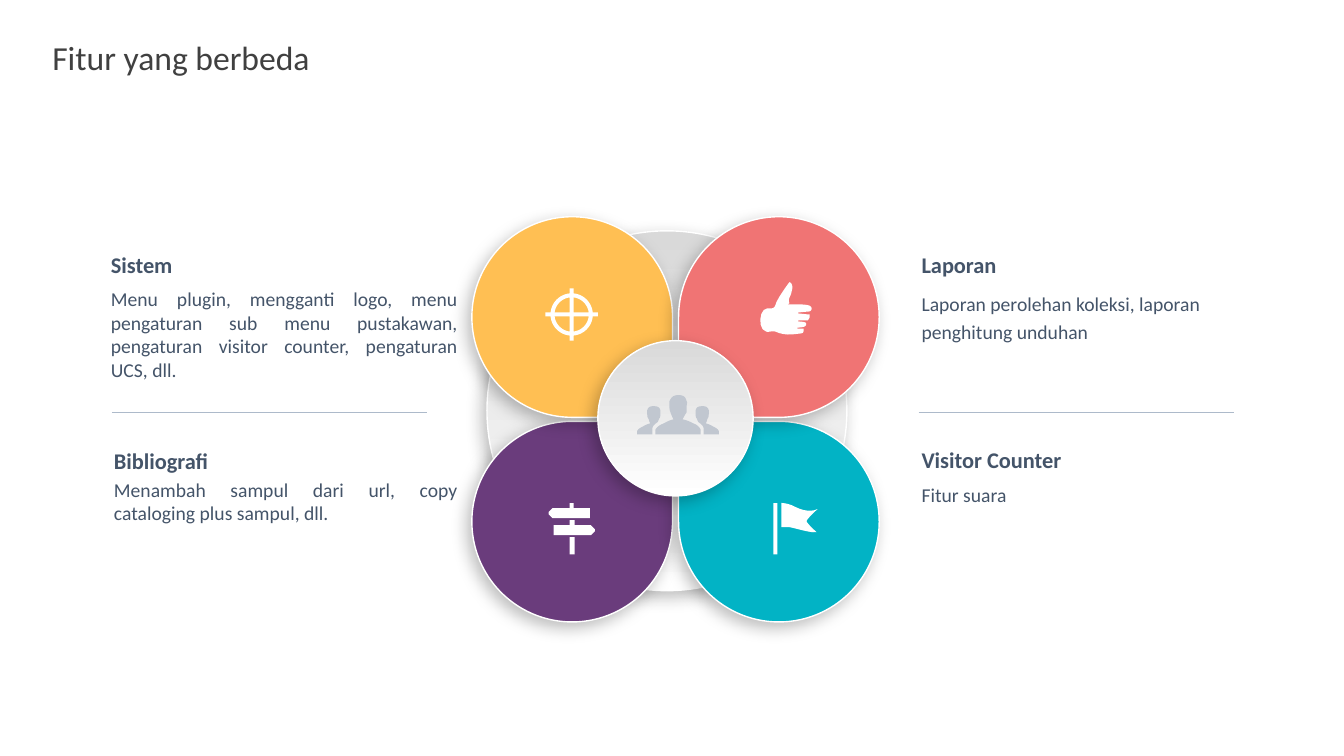
from dataclasses import dataclass
from math import asin, cos, pi, sin
from typing import Optional

from lxml.etree import SubElement
from pptx import Presentation
from pptx.dml.color import RGBColor
from pptx.enum.shapes import MSO_CONNECTOR, MSO_SHAPE
from pptx.enum.text import MSO_AUTO_SIZE, PP_ALIGN
from pptx.oxml.ns import qn
from pptx.util import Inches, Pt


@dataclass(frozen=True)
class Theme:
    font: str = "Calibri"
    title: str = "404040"
    text: str = "445469"
    rule: str = "ADBACA"
    white: str = "FFFFFF"
    grey: str = "D9D9D9"
    people: str = "C1C7D0"
    title_size: int = 24
    heading_size: int = 16
    body_size: int = 14


@dataclass(frozen=True)
class Feature:
    heading: str
    body: str
    x: float
    heading_y: float
    body_y: float
    width: float
    height: float
    align: Optional[PP_ALIGN] = None
    spacing: Optional[float] = None


@dataclass(frozen=True)
class Petal:
    x: float
    y: float
    rotation: int
    color: str


THEME = Theme()
LEFT, RIGHT, TOP, BOTTOM = 4.68, 6.73, 2.15, 4.18

FEATURES = [
    Feature("Sistem", "Menu plugin, mengganti logo, menu pengaturan sub menu pustakawan, "
            "pengaturan visitor counter, pengaturan UCS, dll.",
            1.1, 2.49, 2.85, 3.44, 0.94, PP_ALIGN.JUSTIFY),
    Feature("Bibliografi", "Menambah sampul dari url, copy cataloging plus sampul, dll.",
            1.13, 4.44, 4.74, 3.41, 0.47, PP_ALIGN.JUSTIFY),
    Feature("Laporan", "Laporan perolehan koleksi, laporan penghitung unduhan",
            9.14, 2.49, 2.85, 3.49, 0.56, spacing=1.2),
    Feature("Visitor Counter", "Fitur suara", 9.14, 4.43, 4.74, 3.38, 0.28, spacing=1.2),
]

PETALS = [
    Petal(LEFT, BOTTOM, 0, "6A3C7C"),
    Petal(RIGHT, BOTTOM, 270, "02B3C5"),
    Petal(LEFT, TOP, 90, "FFBF53"),
    Petal(RIGHT, TOP, 180, "F07474"),
]

THUMB = [
    (7.91, 3.19), (7.92, 3.18), (8.01, 3.18), (8.04, 3.15, 8.03, 3.13, 8.03, 3.12),
    (8.02, 3.12), (7.92, 3.11), (7.91, 3.11), (7.92, 3.1), (8.03, 3.09),
    (8.05, 3.08, 8.06, 3.06, 8.04, 3.04), (8.02, 3.02, 7.95, 3.02, 7.89, 3.02),
    (7.81, 3.02), (7.83, 3.01), (7.81, 2.96, 7.85, 2.93, 7.85, 2.9),
    (7.88, 2.81, 7.83, 2.8, 7.83, 2.8), (7.83, 2.8, 7.7, 2.97, 7.69, 3.03),
    (7.68, 3.07, 7.63, 3.06, 7.61, 3.06), (7.53, 3.06, 7.51, 3.27, 7.6, 3.29),
    (7.62, 3.3, 7.65, 3.28, 7.69, 3.29), (7.78, 3.33, 7.85, 3.32, 7.93, 3.31),
    (7.98, 3.31, 7.97, 3.28, 7.97, 3.26), (7.91, 3.26), (7.91, 3.25),
    (7.92, 3.25, 7.95, 3.25, 7.98, 3.24), (8, 3.23, 8, 3.21, 7.99, 3.2),
    (7.96, 3.19, 7.93, 3.19, 7.92, 3.19),
]
UPPER_BOARD = [(5.65, 5.04), (5.48, 5.04), (5.44, 5.08), (5.44, 5.1), (5.48, 5.14),
               (5.85, 5.14), (5.85, 5.04), (5.69, 5.04), (5.69, 4.99), (5.65, 4.99)]
LOWER_BOARD = [(5.65, 5.21), (5.49, 5.21), (5.49, 5.31), (5.86, 5.31), (5.9, 5.27),
               (5.9, 5.25), (5.86, 5.21), (5.7, 5.21), (5.7, 5.16), (5.65, 5.16)]
FLAG = [(8, 5.17), (8, 5.15, 8.11, 5.05, 8.11, 5.05), (8.05, 5.08, 7.97, 5.07, 7.89, 5.03),
        (7.82, 4.99, 7.75, 4.99, 7.75, 4.99), (7.75, 5.23), (7.76, 5.23, 7.77, 5.23, 7.83, 5.23),
        (7.89, 5.24, 8.04, 5.29, 8.1, 5.28), (8.1, 5.28, 8, 5.19, 8, 5.17)]
SIDE_PERSON = [
    (6.47, 4.31), (6.47, 4.26), (6.47, 4.25, 6.47, 4.22, 6.52, 4.19),
    (6.53, 4.18, 6.53, 4.17, 6.54, 4.15), (6.55, 4.14, 6.55, 4.12, 6.55, 4.11),
    (6.55, 4.1, 6.55, 4.08, 6.55, 4.07), (6.54, 4.03, 6.51, 4.03, 6.48, 4.03),
    (6.46, 4.03, 6.43, 4.03, 6.42, 4.07), (6.42, 4.08, 6.42, 4.1, 6.42, 4.11),
    (6.42, 4.12, 6.42, 4.14, 6.43, 4.15), (6.44, 4.17, 6.44, 4.19, 6.45, 4.2),
    (6.41, 4.21, 6.38, 4.23, 6.36, 4.24), (6.32, 4.26, 6.32, 4.28, 6.32, 4.28), (6.32, 4.31),
]
MIDDLE_PERSON = [
    (6.9, 4.21), (6.87, 4.2, 6.83, 4.17, 6.77, 4.16), (6.78, 4.14, 6.79, 4.12, 6.81, 4.09),
    (6.81, 4.07, 6.81, 4.05, 6.81, 4.03), (6.81, 4.02, 6.82, 3.99, 6.81, 3.98),
    (6.8, 3.93, 6.77, 3.92, 6.73, 3.92), (6.69, 3.92, 6.66, 3.93, 6.64, 3.98),
    (6.64, 3.99, 6.64, 4.02, 6.64, 4.03), (6.64, 4.05, 6.64, 4.07, 6.65, 4.09),
    (6.66, 4.12, 6.67, 4.14, 6.68, 4.16), (6.63, 4.17, 6.59, 4.2, 6.56, 4.21),
    (6.5, 4.24, 6.5, 4.27, 6.5, 4.27), (6.5, 4.31), (6.95, 4.31), (6.95, 4.27),
    (6.95, 4.27, 6.95, 4.24, 6.9, 4.21),
]


def rgb(color: str) -> RGBColor:
    return RGBColor.from_string(color)


def add_text(s, box: tuple, text: str, size: int, color: str, bold: bool = False,
             inset: Optional[float] = 0, **layout) -> None:
    tf = s.shapes.add_textbox(*map(Inches, box)).text_frame
    tf.word_wrap = True
    tf.auto_size = MSO_AUTO_SIZE.SHAPE_TO_FIT_TEXT
    if inset is not None:
        for side in ("left", "top", "right", "bottom"):
            setattr(tf, f"margin_{side}", Inches(inset))
    p = tf.paragraphs[0]
    for key, value in layout.items():
        setattr(p, key, value)
    r = p.add_run()
    r.text = text
    for key, value in {"name": THEME.font, "size": Pt(size), "bold": bold}.items():
        setattr(r.font, key, value)
    r.font.color.rgb = rgb(color)


def add_disc(s, kind: MSO_SHAPE, x: float, y: float, size: float,
             color: Optional[str] = None, rotation: int = 0) -> None:
    sp = s.shapes.add_shape(kind, *map(Inches, (x, y, size, size)))
    sp.rotation = rotation
    if color:
        sp.fill.solid()
        sp.fill.fore_color.rgb = rgb(color)
    else:
        sp.fill.gradient()
        sp.fill.gradient_angle = 90
        for stop, shade in zip(sp.fill.gradient_stops, (THEME.white, THEME.grey)):
            stop.color.rgb = rgb(shade)
    sp.line.color.rgb = rgb(THEME.white)
    sp.line.width = Pt(1)
    sp.shadow.inherit = False
    effects = sp._element.spPr.find(qn("a:effectLst"))
    shadow = SubElement(effects, qn("a:outerShdw"), blurRad=str(Pt(12)), dist=str(Pt(5)),
                        dir="8100000", algn="tr", rotWithShape="0")
    black = SubElement(shadow, qn("a:srgbClr"), val="000000")
    SubElement(black, qn("a:alpha"), val="26000")


def paint(sp, color: str) -> None:
    sp.fill.solid()
    sp.fill.fore_color.rgb = rgb(color)
    sp.line.fill.background()
    sp.shadow.inherit = False


def flatten(outline: list, steps: int = 6) -> list:
    points = []
    for item in outline:
        if len(item) == 2:
            points.append(item)
            continue
        curve = (points[-1], item[:2], item[2:4], item[4:])
        for t in (i / steps for i in range(1, steps + 1)):
            weights = ((1 - t) ** 3, 3 * t * (1 - t) ** 2, 3 * t * t * (1 - t), t ** 3)
            points.append(tuple(sum(w * c[axis] for w, c in zip(weights, curve))
                                for axis in (0, 1)))
    return points


def add_outline(s, contours: list, color: str) -> None:
    loops = [[(Inches(x), Inches(y)) for x, y in flatten(c)] for c in contours]
    builder = s.shapes.build_freeform(*loops[0][0], scale=1.0)
    builder.add_line_segments(loops[0][1:], close=True)
    for loop in loops[1:]:
        builder.move_to(*loop[0])
        builder.add_line_segments(loop[1:], close=True)
    paint(builder.convert_to_shape(), color)


def add_bar(s, x: float, y: float, width: float, height: float, color: str) -> None:
    paint(s.shapes.add_shape(MSO_SHAPE.RECTANGLE, *map(Inches, (x, y, width, height))), color)


def target(cx: float, cy: float, reach: float, outer: float, inner: float, half: float) -> list:
    def arc(radius: float, quarter: int, steps: int = 12) -> list:
        gap = asin(half / radius)
        angles = [quarter * pi / 2 + gap + (pi / 2 - 2 * gap) * i / steps
                  for i in range(steps + 1)]
        return [(cx + radius * cos(a), cy + radius * sin(a)) for a in angles]

    edge, holes = [], []
    for quarter in range(4):
        c, n = cos(quarter * pi / 2), sin(quarter * pi / 2)
        tip_start, tip_end, corner = [(cx + u * c - v * n, cy + u * n + v * c)
                                      for u, v in ((reach, -half), (reach, half), (half, half))]
        edge += [tip_start, tip_end] + arc(outer, quarter)
        holes.append([corner] + arc(inner, quarter))
    return [edge] + holes


def add_rule(s, x: float, y: float, width: float) -> None:
    line = s.shapes.add_connector(MSO_CONNECTOR.STRAIGHT, *map(Inches, (x, y, x + width, y)))
    line.line.color.rgb = rgb(THEME.rule)
    line.line.width = Pt(0.5)
    SubElement(line._element.spPr, qn("a:effectLst"))


def main() -> None:
    prs = Presentation()
    prs.slide_width, prs.slide_height = Inches(13.33), Inches(7.5)
    s = prs.slides.add_slide(prs.slide_layouts[6])
    add_text(s, (0.42, 0.32, 4.65, 0.5), "Fitur yang berbeda", THEME.title_size, THEME.title,
             inset=None)
    add_disc(s, MSO_SHAPE.OVAL, 4.83, 2.29, 3.57)
    for petal in PETALS:
        add_disc(s, MSO_SHAPE.TEAR, petal.x, petal.y, 1.99, petal.color, petal.rotation)
    add_disc(s, MSO_SHAPE.OVAL, 5.93, 3.38, 1.54)

    add_outline(s, target(5.67, 3.12, 0.26, 0.21, 0.17, 0.02), THEME.white)
    for outline in (THUMB, UPPER_BOARD, LOWER_BOARD, FLAG):
        add_outline(s, [outline], THEME.white)
    add_bar(s, 5.65, 5.33, 0.05, 0.17, THEME.white)
    add_bar(s, 7.67, 4.99, 0.04, 0.51, THEME.white)
    mirrored = [tuple(v if i % 2 else 13.45 - v for i, v in enumerate(item))
                for item in SIDE_PERSON]
    for person in (mirrored, SIDE_PERSON, MIDDLE_PERSON):
        add_outline(s, [person], THEME.people)

    for x in (1.11, 9.11):
        add_rule(s, x, 4.09, 3.13)
    for f in FEATURES:
        add_text(s, (f.x, f.heading_y, 2.14, 0.27), f.heading, THEME.heading_size, THEME.text,
                 bold=True)
        add_text(s, (f.x, f.body_y, f.width, f.height), f.body, THEME.body_size, THEME.text,
                 alignment=f.align, line_spacing=f.spacing)
    prs.save("out.pptx")


if __name__ == "__main__":
    main()
